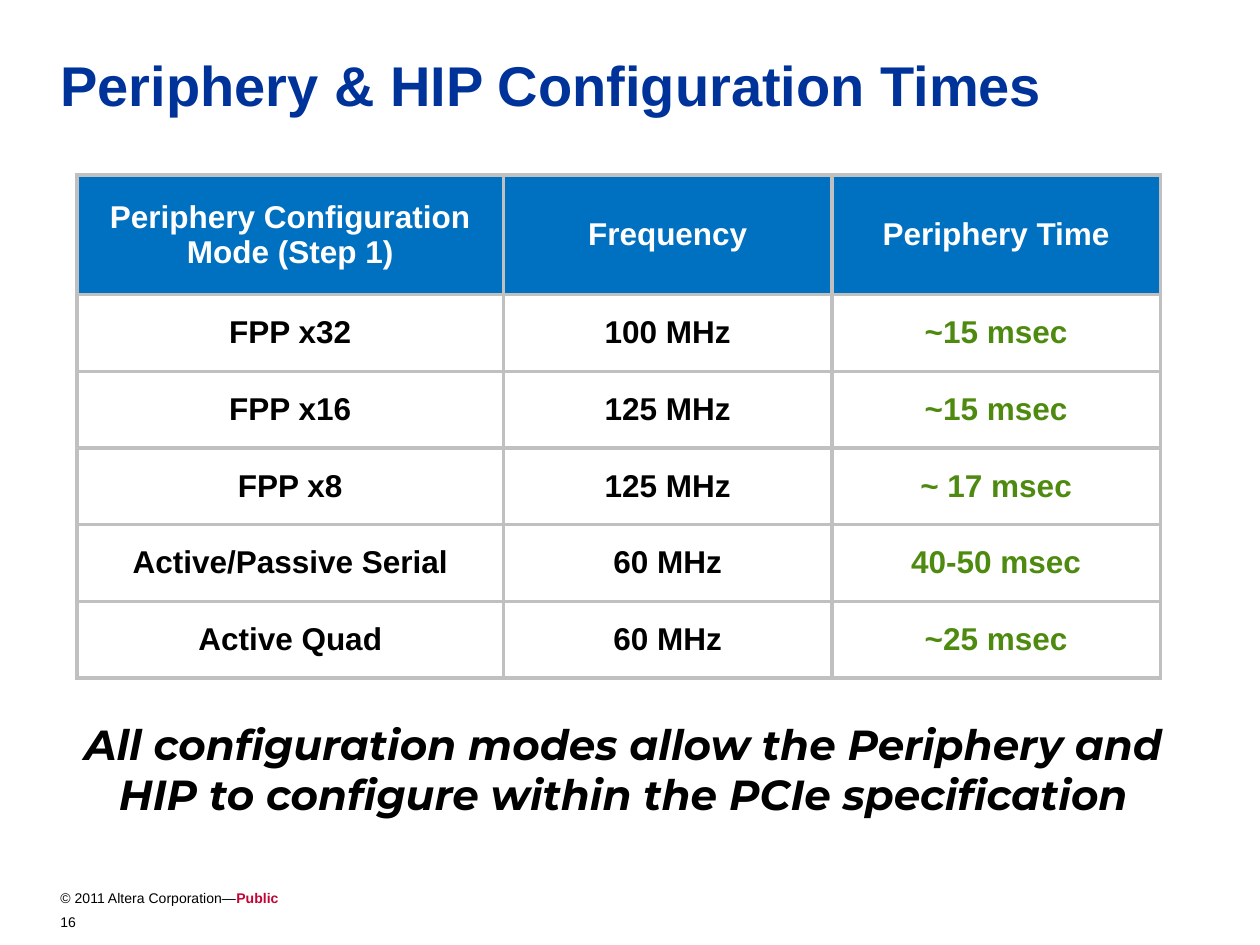
from lxml import etree
from pptx import Presentation
from pptx import util as u
from pptx.dml.color import RGBColor
from pptx.enum import text
from pptx.oxml import ns

BLUE, HEADER, GREEN, RED = "003399", "0070C0", "4F8A10", "C10435"
BLACK, WHITE, GREY = "000000", "FFFFFF", "C0C0C0"

HEADINGS = ["Periphery Configuration Mode (Step 1)", "Frequency", "Periphery Time"]
MODES = [
    ["FPP x32", "100 MHz", "~15 msec"],
    ["FPP x16", "125 MHz", "~15 msec"],
    ["FPP x8", "125 MHz", "~ 17 msec"],
    ["Active/Passive Serial", "60 MHz", "40-50 msec"],
    ["Active Quad", "60 MHz", "~25 msec"],
]


def colour(value):
    return RGBColor.from_string(value)


class SlideBuilder:
    """Holds the text style and the current slide."""

    font_name = "Arial"
    border_width = u.Pt(2.25)

    def __init__(self, slide):
        self.slide = slide

    def style(self, paragraph, size, color, bold=False, italic=False, name=None):
        font = paragraph.font
        font.name = name or self.font_name
        font.size = u.Pt(size)
        font.bold, font.italic = bold, italic
        font.color.rgb = colour(color)

    def text_box(self, left, top, width, height, words, size, color=BLACK,
                 wrap=True, align=text.PP_ALIGN.LEFT, **style):
        shape = self.slide.shapes.add_textbox(
            u.Cm(left), u.Cm(top), u.Cm(width), u.Cm(height))
        shape.text_frame.word_wrap = wrap
        paragraph = shape.text_frame.paragraphs[0]
        paragraph.text = words
        paragraph.alignment = align
        self.style(paragraph, size, color, **style)
        return shape

    def border(self, cell):
        properties = cell._tc.get_or_add_tcPr()
        for position, side in enumerate(("lnL", "lnR", "lnT", "lnB")):
            line = etree.Element(ns.qn(f"a:{side}"), w=str(self.border_width))
            fill = etree.SubElement(line, ns.qn("a:solidFill"))
            etree.SubElement(fill, ns.qn("a:srgbClr"), val=GREY)
            properties.insert(position, line)

    def cell(self, cell, words, color, fill):
        cell.text = words
        cell.vertical_anchor = text.MSO_ANCHOR.MIDDLE
        cell.fill.solid()
        cell.fill.fore_color.rgb = colour(fill)
        paragraph = cell.text_frame.paragraphs[0]
        paragraph.alignment = text.PP_ALIGN.CENTER
        self.style(paragraph, 18, color, bold=True)
        self.border(cell)

    def table(self, left, top, widths, heights, rows):
        table = self.slide.shapes.add_table(
            len(rows), len(widths), u.Cm(left), u.Cm(top),
            u.Cm(sum(widths)), u.Cm(sum(heights))).table
        for column, width in zip(table.columns, widths):
            column.width = u.Cm(width)
        for row, height in zip(table.rows, heights):
            row.height = u.Cm(height)
        for i, row in enumerate(rows):
            for j, words in enumerate(row):
                if i == 0:
                    self.cell(table.cell(i, j), words, WHITE, HEADER)
                else:
                    last = j == len(row) - 1
                    self.cell(table.cell(i, j), words, GREEN if last else BLACK, WHITE)


def main():
    presentation = Presentation()
    presentation.slide_width, presentation.slide_height = u.Cm(25.4), u.Cm(19.05)
    builder = SlideBuilder(presentation.slides.add_slide(presentation.slide_layouts[6]))

    # Title
    builder.text_box(0.97, 0.9, 23.14, 2.4, "Periphery & HIP Configuration Times",
                     32, BLUE, bold=True)

    # Configuration times
    builder.table(1.55, 3.53, [8.6, 6.62, 6.62], [2.41] + [1.545] * len(MODES),
                  [HEADINGS] + MODES)

    # Conclusion
    builder.text_box(1.07, 14.35, 22.99, 2.31,
                     "All configuration modes allow the Periphery and\v"
                     "HIP to configure within the PCIe specification",
                     24, wrap=False, align=text.PP_ALIGN.CENTER,
                     bold=True, italic=True, name="Montserrat")

    # Footer and page number
    footer = builder.text_box(0.97, 17.81, 11.81, 1.07, "© 2011 Altera Corporation—", 8)
    public = footer.text_frame.paragraphs[0].add_run()
    public.text = "Public"
    public.font.bold = True
    public.font.color.rgb = colour(RED)
    builder.text_box(0.97, 18.29, 1.93, 0.76, "16", 8)

    presentation.save("out.pptx")


if __name__ == "__main__":
    main()
